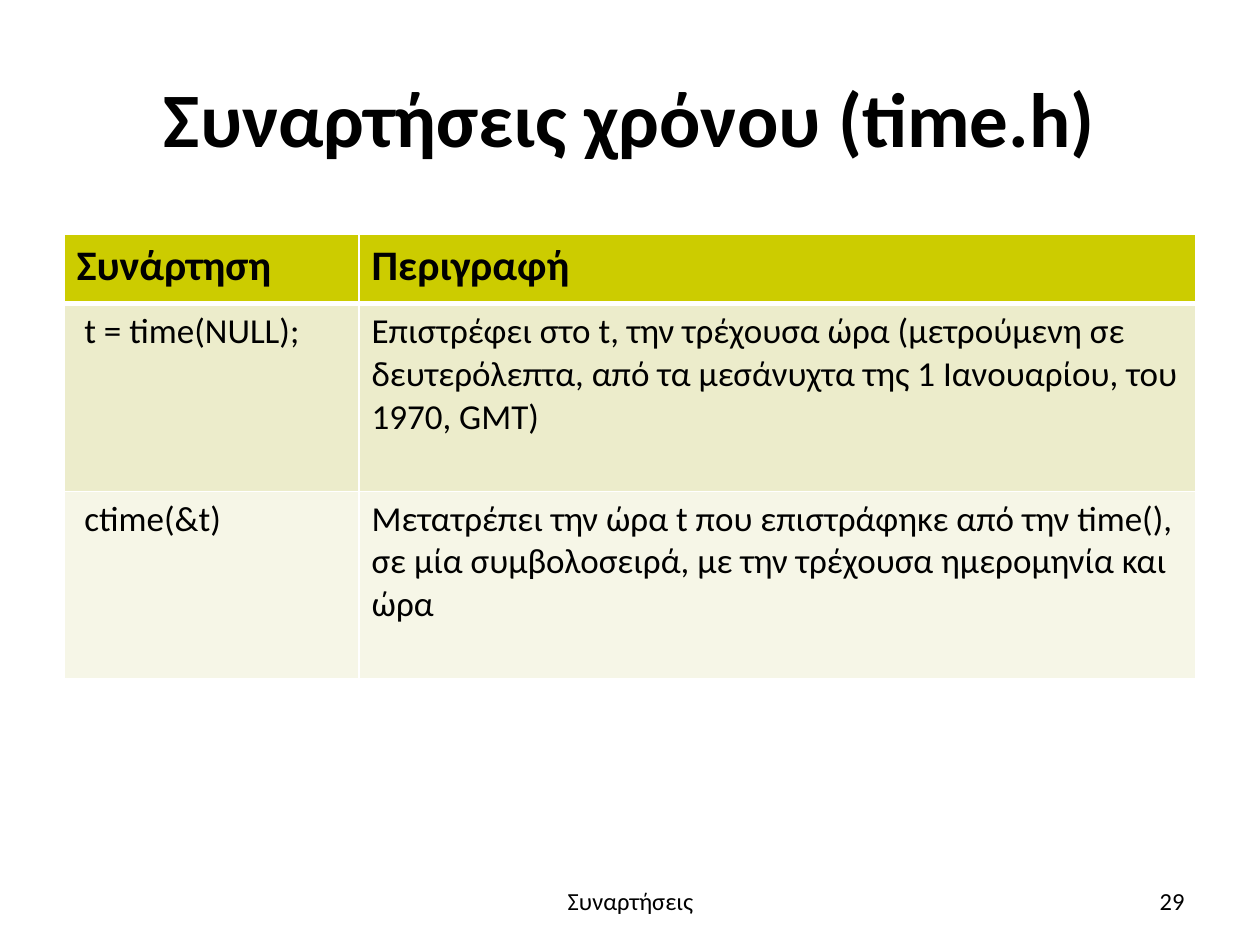
from lxml import etree
from pptx import Presentation
from pptx.dml.color import RGBColor
from pptx.enum.text import MSO_ANCHOR, PP_ALIGN
from pptx.oxml.ns import qn
from pptx.util import Inches, Pt

CENTER, RIGHT, LEFT = PP_ALIGN.CENTER, PP_ALIGN.RIGHT, PP_ALIGN.LEFT
MIDDLE = MSO_ANCHOR.MIDDLE
TITLE_ONLY = 5
WIDTH, HEIGHT = 10, 7.5
COLORS = {"text": "000000", "rule": "FFFFFF", "header": "CCCC00",
          "odd": "ECECCB", "even": "F6F6E7"}
ROWS = [
    ("Συνάρτηση", "Περιγραφή"),
    ("t = time(NULL);",
     "Επιστρέφει στο t, την τρέχουσα ώρα (μετρούμενη σε δευτερόλεπτα, "
     "από τα μεσάνυχτα της 1 Ιανουαρίου, του 1970, GMT)"),
    ("ctime(&t)",
     "Μετατρέπει την ώρα t που επιστράφηκε από την time(), "
     "σε μία συμβολοσειρά, με την τρέχουσα ημερομηνία και ώρα"),
]


class SlideBuilder:
    """Holds the style and current slide; lengths are shares of the slide's size."""

    def __init__(self, deck, font="Calibri"):
        self.deck = deck
        self.font = font
        self.page = deck.slides.add_slide(deck.slide_layouts[TITLE_ONLY])

    def across(self, share):
        return int(self.deck.slide_width * share)

    def down(self, share):
        return int(self.deck.slide_height * share)

    def frame(self, left, top, width, height):
        return self.across(left), self.down(top), self.across(width), self.down(height)

    def add_text(self, text_frame, text, size, align=LEFT, bold=False):
        para = text_frame.paragraphs[0]
        para.alignment = align
        span = para.add_run()
        span.text = text
        span.font.name = self.font
        span.font.size = Pt(size)
        span.font.bold = bold
        span.font.color.rgb = RGBColor.from_string(COLORS["text"])

    def title(self, text, *area):
        box = self.page.shapes.title
        box.left, box.top, box.width, box.height = self.frame(*area)
        box.text_frame.vertical_anchor = MIDDLE
        self.add_text(box.text_frame, text, 44, CENTER, True)

    def label(self, text, align, *area):
        box = self.page.shapes.add_textbox(*self.frame(*area))
        box.text_frame.word_wrap = True
        box.text_frame.vertical_anchor = MIDDLE
        self.add_text(box.text_frame, text, 14, align)

    def borders(self, cell, row):
        weights = {"a:lnL": 1, "a:lnR": 1, "a:lnT": 3 if row == 1 else 1,
                   "a:lnB": 3 if row == 0 else 1}
        properties = cell._tc.get_or_add_tcPr()
        for side, weight in weights.items():
            line = etree.SubElement(properties, qn(side), w=str(Pt(weight)))
            fill = etree.SubElement(line, qn("a:solidFill"))
            etree.SubElement(fill, qn("a:srgbClr"), val=COLORS["rule"])

    def table(self, rows, left, top, widths, heights):
        area = self.frame(left, top, sum(widths), sum(heights))
        grid = self.page.shapes.add_table(len(rows), len(widths), *area).table
        for column, share in zip(grid.columns, widths):
            column.width = self.across(share)
        for row, share in zip(grid.rows, heights):
            row.height = self.down(share)
        for r, texts in enumerate(rows):
            band = "header" if r == 0 else ("even", "odd")[r % 2]
            for c, text in enumerate(texts):
                cell = grid.cell(r, c)
                self.borders(cell, r)
                cell.fill.solid()
                cell.fill.fore_color.rgb = RGBColor.from_string(COLORS[band])
                cell.margin_left = Inches(0.16 if r and c == 0 else 0.1)
                self.add_text(cell.text_frame, text, 20 if r else 24, bold=r == 0)


def main():
    deck = Presentation()
    deck.slide_width, deck.slide_height = Inches(WIDTH), Inches(HEIGHT)
    slide = SlideBuilder(deck)
    slide.title("Συναρτήσεις χρόνου (time.h)", 0.05, 0.04, 0.9, 1.25 / HEIGHT)
    slide.table(ROWS, 0.051, 1.86 / HEIGHT, (0.234, 0.664),
                [height / HEIGHT for height in (0.55, 1.49, 1.49)])
    top, height = 6.95 / HEIGHT, 0.4 / HEIGHT
    for text, align, left, width in (("Συναρτήσεις", CENTER, 0.342, 0.317),
                                     ("29", RIGHT, 0.717, 0.233)):
        slide.label(text, align, left, top, width, height)
    deck.save("out.pptx")


if __name__ == "__main__":
    main()
